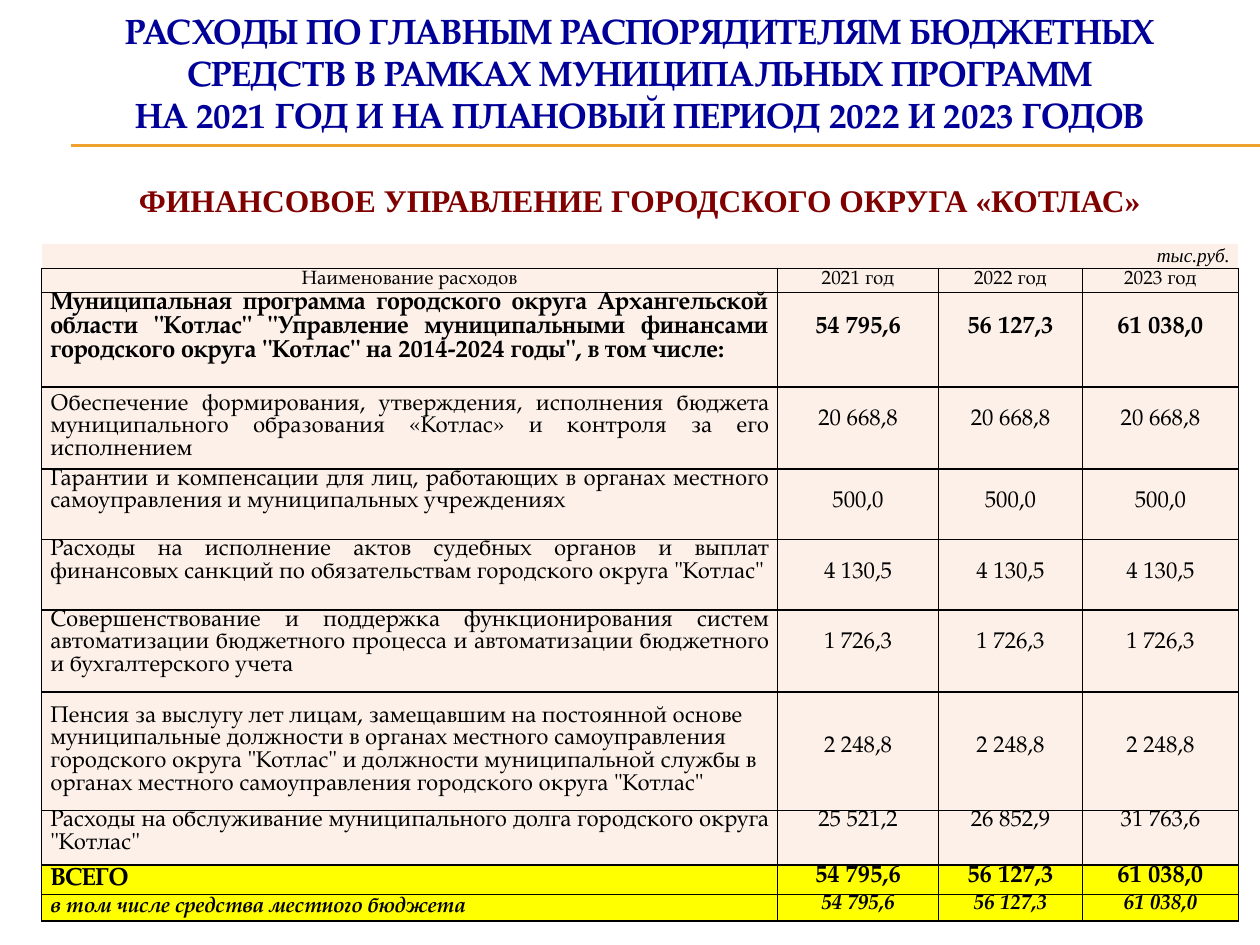
"""Build the slide on spending of the financial department by municipal programme."""
import pptx
import pptx.dml.color
import pptx.enum.shapes
import pptx.enum.text
import pptx.oxml
import pptx.oxml.ns
import pptx.util

Inches, Pt = pptx.util.Inches, pptx.util.Pt
RGBColor = pptx.dml.color.RGBColor
Align, Anchor = pptx.enum.text.PP_ALIGN, pptx.enum.text.MSO_ANCHOR

NAVY = RGBColor(0x00, 0x00, 0x99)
MAROON = RGBColor(0x80, 0x00, 0x00)
BLACK = RGBColor(0x00, 0x00, 0x00)
AMBER = RGBColor(0xF0, 0xA2, 0x2E)
CREAM = RGBColor(0xFC, 0xF0, 0xE8)
YELLOW = RGBColor(0xFF, 0xFF, 0x00)
SERIF, TIMES = "TeX Gyre Pagella", "Times New Roman"
LINE_SHARE = 0.98

TITLE = [
    "РАСХОДЫ ПО ГЛАВНЫМ РАСПОРЯДИТЕЛЯМ БЮДЖЕТНЫХ СРЕДСТВ В РАМКАХ МУНИЦИПАЛЬНЫХ ПРОГРАММ",
    "НА 2021 ГОД И НА ПЛАНОВЫЙ ПЕРИОД 2022 И 2023 ГОДОВ",
]
DEPARTMENT = "ФИНАНСОВОЕ УПРАВЛЕНИЕ ГОРОДСКОГО ОКРУГА «КОТЛАС»"

UNIT = dict(size=11, font=TIMES, italic=True)
HEADER = dict(size=11)
PROGRAMME = dict(size=14, bold=True)
ITEM = dict(size=13)
TOTAL = dict(size=14, bold=True)
LOCAL = dict(size=12, bold=True, italic=True)

COLUMNS = [5.84, 1.28, 1.14, 1.24]
# Each row: height, format, name alignment, name anchor, lines above the values, fill, texts
ROWS = [
    (0.19, UNIT, Align.RIGHT, Anchor.MIDDLE, 0, CREAM, ["", "", "", "тыс.руб."]),
    (0.19, HEADER, Align.CENTER, Anchor.MIDDLE, 0, CREAM,
     ["Наименование расходов", "2021 год", "2022 год", "2023 год"]),
    (0.75, PROGRAMME, Align.JUSTIFY, Anchor.TOP, 1, CREAM,
     ['Муниципальная программа городского округа Архангельской области "Котлас" '
      '"Управление муниципальными финансами городского округа "Котлас" '
      'на 2014-2024 годы", в том числе:', "54 795,6", "56 127,3", "61 038,0"]),
    (0.56, ITEM, Align.JUSTIFY, Anchor.MIDDLE, 1, CREAM,
     ["Обеспечение формирования, утверждения, исполнения бюджета муниципального "
      "образования «Котлас» и контроля за его исполнением",
      "20 668,8", "20 668,8", "20 668,8"]),
    (0.56, ITEM, Align.JUSTIFY, Anchor.TOP, 1, CREAM,
     ["Гарантии и компенсации для лиц, работающих в органах местного "
      "самоуправления и муниципальных учреждениях", "500,0", "500,0", "500,0"]),
    (0.56, ITEM, Align.JUSTIFY, Anchor.TOP, 1, CREAM,
     ["Расходы на исполнение актов судебных органов и выплат финансовых санкций "
      'по обязательствам городского округа "Котлас"', "4 130,5", "4 130,5", "4 130,5"]),
    (0.56, ITEM, Align.JUSTIFY, Anchor.TOP, 1, CREAM,
     ["Совершенствование и поддержка функционирования систем автоматизации "
      "бюджетного процесса и автоматизации бюджетного и бухгалтерского учета",
      "1 726,3", "1 726,3", "1 726,3"]),
    (0.94, ITEM, Align.LEFT, Anchor.MIDDLE, 2, CREAM,
     ["Пенсия за выслугу лет лицам, замещавшим на постоянной основе муниципальные "
      'должности в органах местного самоуправления городского округа "Котлас" и '
      "должности муниципальной службы в органах местного самоуправления "
      'городского округа "Котлас"', "2 248,8", "2 248,8", "2 248,8"]),
    (0.38, ITEM, Align.JUSTIFY, Anchor.TOP, 0, CREAM,
     ['Расходы на обслуживание муниципального долга городского округа "Котлас"',
      "25 521,2", "26 852,9", "31 763,6"]),
    (0.21, TOTAL, Align.LEFT, Anchor.MIDDLE, 0, YELLOW,
     ["ВСЕГО", "54 795,6", "56 127,3", "61 038,0"]),
    (0.21, LOCAL, Align.LEFT, Anchor.MIDDLE, 0, YELLOW,
     ["в том числе средства местного бюджета", "54 795,6", "56 127,3", "61 038,0"]),
]


def write(para, text, size, font=SERIF, color=BLACK, bold=False, italic=False,
          align=Align.CENTER, before=0):
    para.alignment = align
    para.line_spacing = 1.0
    para.space_before = Pt(before)
    para._p.get_or_add_endParaRPr().set("sz", str(size * 100))
    if text:
        span = para.add_run()
        span.text = text
        span.font.size, span.font.name = Pt(size), font
        span.font.bold, span.font.italic = bold, italic
        span.font.color.rgb = color


def border(cell, sides):
    properties = cell._tc.get_or_add_tcPr()
    for position, side in enumerate(("L", "R", "T", "B")):
        paint = ('<a:solidFill><a:srgbClr val="000000"/></a:solidFill>'
                 if side in sides else "<a:noFill/>")
        edge = pptx.oxml.parse_xml(
            f'<a:ln{side} {pptx.oxml.ns.nsdecls("a")} w="12700">{paint}</a:ln{side}>')
        properties.insert(position, edge)


def add_rules(page):
    for top in (1.15, 1.16):
        rule = page.shapes.add_connector(
            pptx.enum.shapes.MSO_CONNECTOR.STRAIGHT,
            Inches(0.56), Inches(top), Inches(10), Inches(top))
        rule.line.color.rgb = AMBER
        rule.line.width = Pt(0.75)
        rule._element.spPr.append(
            pptx.oxml.parse_xml(f'<a:effectLst {pptx.oxml.ns.nsdecls("a")}/>'))


def add_title(page):
    box = page.shapes.add_textbox(Inches(0.33), Inches(0.5), Inches(9.5), Inches(0.81))
    frame = box.text_frame
    frame.word_wrap = True
    frame.vertical_anchor = Anchor.MIDDLE
    write(frame.paragraphs[0], TITLE[0], 20, color=NAVY, bold=True)
    write(frame.add_paragraph(), TITLE[1], 20, color=NAVY, bold=True)
    write(frame.add_paragraph(), DEPARTMENT, 18, font=TIMES, color=MAROON,
          bold=True, before=26)


def add_spending(page):
    heights = [row[0] for row in ROWS]
    table = page.shapes.add_table(
        len(ROWS), len(COLUMNS), Inches(0.33), Inches(1.94),
        Inches(sum(COLUMNS)), Inches(sum(heights))).table
    table.first_row = table.horz_banding = False
    for column, width in zip(table.columns, COLUMNS):
        column.width = Inches(width)
    for index, (height, style, align, anchor, lead, fill, texts) in enumerate(ROWS):
        table.rows[index].height = Inches(height)
        for place, text in enumerate(texts):
            cell = table.cell(index, place)
            is_value = place > 0 and index > 1
            cell.margin_left = cell.margin_right = Inches(0.07)
            cell.margin_top = Pt(lead * style["size"] * LINE_SHARE if is_value else 0)
            cell.margin_bottom = 0
            cell.vertical_anchor = Anchor.TOP if is_value else anchor
            cell.fill.solid()
            cell.fill.fore_color.rgb = fill
            border(cell, "LRTB" if index else "B")
            write(cell.text_frame.paragraphs[0], text,
                  align=Align.CENTER if is_value else align, **style)


def main():
    deck = pptx.Presentation()
    deck.slide_width, deck.slide_height = Inches(10), Inches(7.5)
    page = deck.slides.add_slide(deck.slide_layouts[6])
    add_rules(page)
    add_title(page)
    add_spending(page)
    deck.save("out.pptx")


if __name__ == "__main__":
    main()
